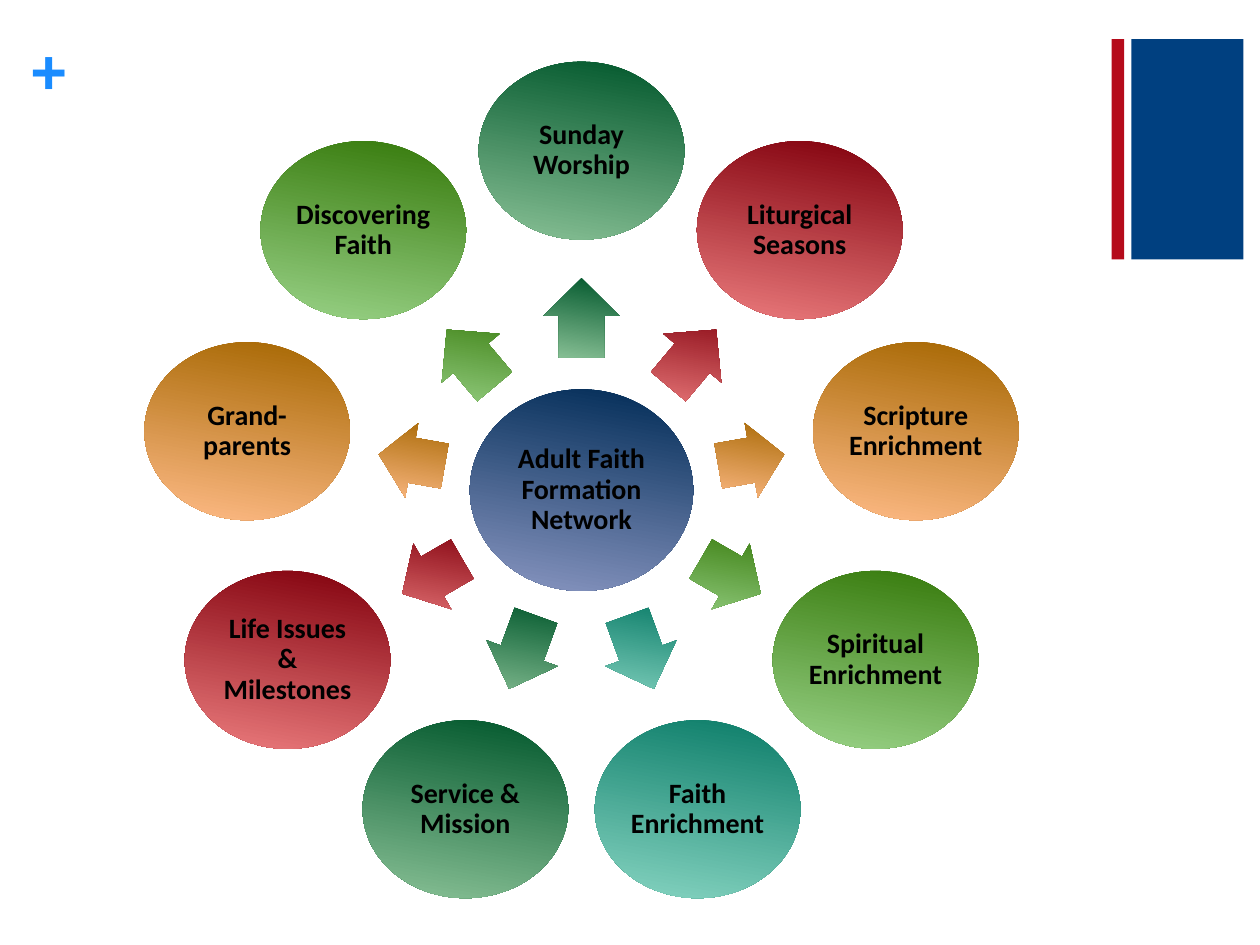
from math import cos, radians, sin

from pptx import Presentation
from pptx.dml.color import RGBColor
from pptx.enum.shapes import MSO_SHAPE as SHAPE
from pptx.enum.text import MSO_ANCHOR as ANCHOR, PP_ALIGN as ALIGN
from pptx.oxml.ns import qn
from pptx.util import Pt

BLACK = RGBColor(0x00, 0x00, 0x00)
PLUS_BLUE = RGBColor(0x1A, 0x8C, 0xFF)
BAR_BLUE = RGBColor(0x00, 0x40, 0x80)
BAR_RED = RGBColor(0xB5, 0x0B, 0x1B)
NAVY = RGBColor(0x00, 0x2B, 0x56), RGBColor(0x89, 0x96, 0xC1)
GREEN = RGBColor(0x00, 0x56, 0x2B), RGBColor(0x89, 0xC1, 0x96)
RED = RGBColor(0x81, 0x00, 0x0C), RGBColor(0xEB, 0x7B, 0x7D)
ORANGE = RGBColor(0xA5, 0x66, 0x00), RGBColor(0xFF, 0xBB, 0x87)
LIME = RGBColor(0x35, 0x79, 0x0A), RGBColor(0x99, 0xD2, 0x87)
TEAL = RGBColor(0x0B, 0x7C, 0x68), RGBColor(0x86, 0xD4, 0xC1)

HUB = "Adult Faith Formation Network"
TOPICS = [
    ("Sunday Worship", GREEN, 45.4),
    ("Liturgical Seasons", RED, 42.5),
    ("Scripture Enrichment", ORANGE, 38.2),
    ("Spiritual Enrichment", LIME, 39.6),
    ("Faith Enrichment", TEAL, 44.6),
    ("Service & Mission", GREEN, 44.6),
    ("Life Issues & Milestones", RED, 39.6),
    ("Grand-parents", ORANGE, 38.2),
    ("Discovering Faith", LIME, 42.5),
]
BARS = [(646.5, 64, BAR_BLUE), (635.2, 7.2, BAR_RED)]

CX, CY = 332.3, 280.1
TOPIC_RADIUS, ARROW_RADIUS = 194, 98.5
HUB_SIZE, TOPIC_SIZE = (127.6, 115.2), (117.5, 101.7)
ARROW_HEIGHT = 43.2
LABEL_FONT = {"name": "Calibri", "size": Pt(16), "bold": True}
PLUS_FONT = {"name": "Arial", "size": Pt(36), "bold": True}
MARGINS = "margin_left", "margin_top", "margin_right", "margin_bottom"


def write(tf, text, font, color, margin):
    for side in MARGINS:
        setattr(tf, side, Pt(margin))
    p = tf.paragraphs[0]
    r = p.add_run()
    r.text = text
    for key, value in font.items():
        setattr(r.font, key, value)
    r.font.color.rgb = color
    return p


def add_gradient_shape(s, kind, x, y, size, colors):
    w, h = size
    sp = s.shapes.add_shape(kind, Pt(x - w / 2), Pt(y - h / 2), Pt(w), Pt(h))
    sp.shadow.inherit = False
    sp.line.fill.background()
    sp.fill.gradient()
    sp.fill.gradient_angle = 260
    for stop, color in zip(sp.fill.gradient_stops, colors):
        stop.color.rgb = color
    sp._element.spPr.find(qn("a:gradFill")).set("rotWithShape", "0")
    return sp


def add_circle(s, x, y, size, colors, text):
    sp = add_gradient_shape(s, SHAPE.OVAL, x, y, size, colors)
    tf = sp.text_frame
    tf.word_wrap = True
    tf.vertical_anchor = ANCHOR.MIDDLE
    p = write(tf, text, LABEL_FONT, BLACK, 1.6)
    p.alignment = ALIGN.CENTER
    p.line_spacing = 0.9


def add_arrow(s, x, y, length, angle, colors):
    size = length, ARROW_HEIGHT
    sp = add_gradient_shape(s, SHAPE.RIGHT_ARROW, x, y, size, colors)
    sp.adjustments[0], sp.adjustments[1] = 0.6, 0.5
    sp.rotation = angle % 360


def on_ring(radius, angle):
    a = radians(angle)
    return CX + radius * cos(a), CY + radius * sin(a)


def main():
    prs = Presentation()
    prs.slide_width, prs.slide_height = Pt(720), Pt(540)
    s = prs.slides.add_slide(prs.slide_layouts[6])

    for left, width, color in BARS:
        sp = s.shapes.add_shape(SHAPE.RECTANGLE, Pt(left), Pt(22.3), Pt(width), Pt(126))
        sp.shadow.inherit = False
        sp.fill.solid()
        sp.fill.fore_color.rgb = color
        sp.line.fill.background()

    plus = s.shapes.add_textbox(Pt(17.3), Pt(18), Pt(21), Pt(44))
    write(plus.text_frame, "+", PLUS_FONT, PLUS_BLUE, 0)

    add_circle(s, CX, CY, HUB_SIZE, NAVY, HUB)
    for i, (text, colors, length) in enumerate(TOPICS):
        angle = i * 360 / len(TOPICS) - 90
        add_arrow(s, *on_ring(ARROW_RADIUS, angle), length, angle, colors)
        add_circle(s, *on_ring(TOPIC_RADIUS, angle), TOPIC_SIZE, colors, text)

    prs.save("out.pptx")


if __name__ == "__main__":
    main()
